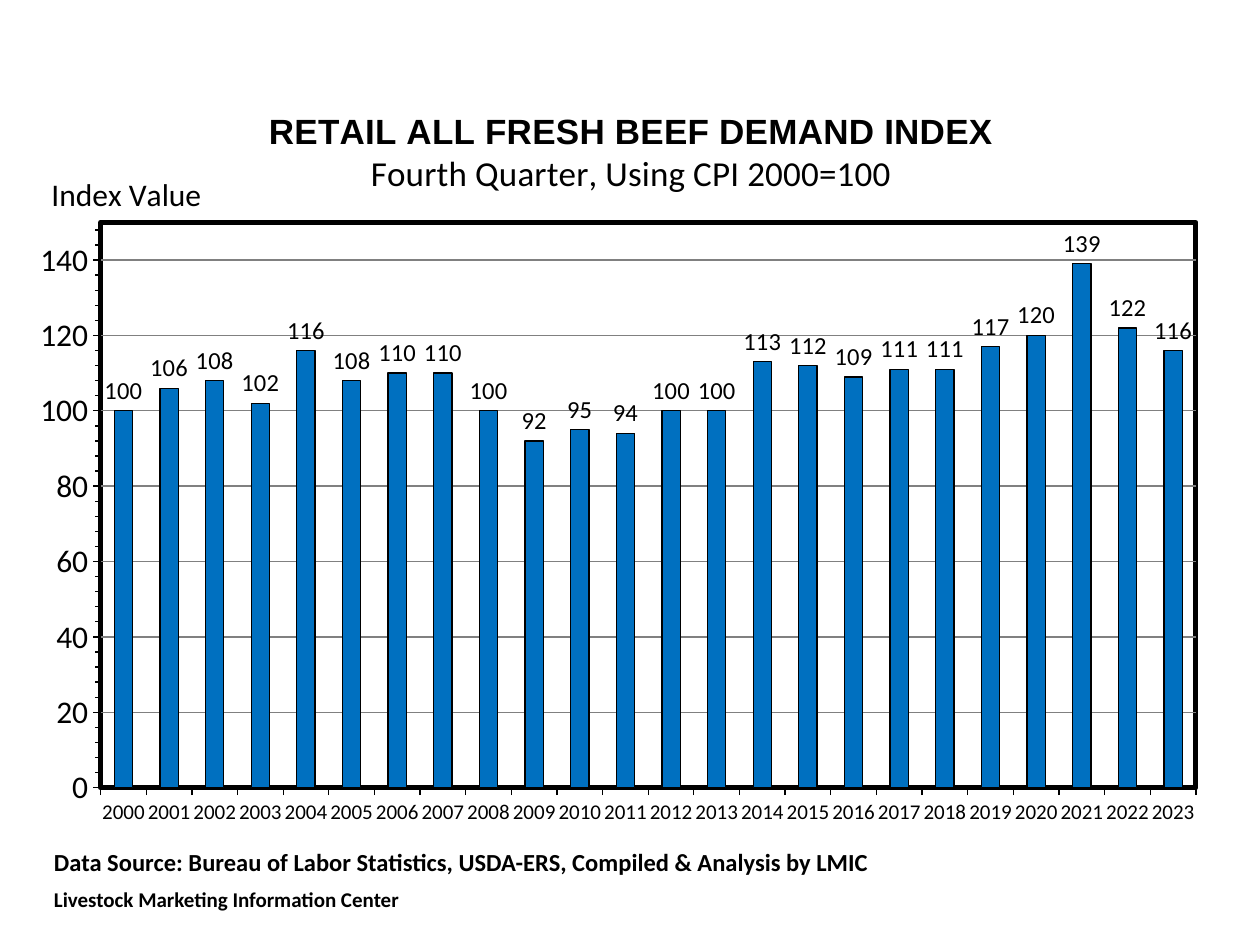
from lxml import etree
from pptx import Presentation
from pptx.chart.data import CategoryChartData
from pptx.dml.color import RGBColor
from pptx.enum.chart import XL_CHART_TYPE as ChartType, XL_LABEL_POSITION as LabelPosition
from pptx.enum.chart import XL_TICK_MARK as TickMark
from pptx.oxml import parse_xml
from pptx.oxml.ns import nsdecls, qn
from pptx.util import Inches, Pt

HEADING = "RETAIL ALL FRESH BEEF DEMAND INDEX"
SUBHEADING = "Fourth Quarter, Using CPI 2000=100"
AXIS_TITLE = "Index Value"
SOURCE = "Data Source: Bureau of Labor Statistics, USDA-ERS, Compiled & Analysis by LMIC"
PUBLISHER = "Livestock Marketing Information Center"
FIRST_YEAR = 2000
DEMAND_INDEX = [100, 106, 108, 102, 116, 108, 110, 110, 100, 92, 95, 94,
                100, 100, 113, 112, 109, 111, 111, 117, 120, 139, 122, 116]

THEME = {
    "ink": RGBColor(0, 0, 0), "bar": RGBColor(0x00, 0x70, 0xC0),
    "grid": RGBColor(0x80, 0x80, 0x80), "body": "Calibri", "display": "Arial",
    "title": 20, "axis": 18, "label": 14, "small": 12,
}


def style(font, size, name=THEME["body"], bold=False):
    font.size, font.name, font.bold = Pt(size), name, bold
    font.color.rgb = THEME["ink"]


def write(frame, text, first=False, space_before=0, **font_format):
    paragraph = frame.paragraphs[0] if first else frame.add_paragraph()
    if space_before:
        paragraph.space_before = Pt(space_before)
    run = paragraph.add_run()
    run.text = text
    style(run.font, **font_format)


def outline(line, color=THEME["ink"], width=0.75):
    line.color.rgb = color
    line.width = Pt(width)


def manual_layout(x, y, size=None):
    """Return a c:layout placed in fractions of the chart area."""
    layout = etree.Element(qn("c:layout"))
    manual = etree.SubElement(layout, qn("c:manualLayout"))
    settings = [("xMode", "edge"), ("yMode", "edge"), ("x", x), ("y", y)]
    if size:
        settings = [("layoutTarget", "inner")] + settings + list(zip("wh", size))
    for tag, value in settings:
        etree.SubElement(manual, qn(f"c:{tag}")).set("val", str(value))
    return layout


def place_title(title, x, y):
    element = title._element
    for old in element.findall(qn("c:layout")):
        element.remove(old)
    element.find(qn("c:tx")).addnext(manual_layout(x, y))


def frame_plot(chart):
    plot_area = chart._chartSpace.chart.plotArea
    for old in plot_area.findall(qn("c:layout")):
        plot_area.remove(old)
    plot_area.insert(0, manual_layout(0.065, 0.185, (0.899, 0.758)))
    plot_area.append(parse_xml(
        f'<c:spPr {nsdecls("c", "a")}>'
        '<a:solidFill><a:srgbClr val="FFFFFF"/></a:solidFill>'
        '<a:ln w="38100"><a:solidFill><a:srgbClr val="000000"/></a:solidFill></a:ln>'
        '</c:spPr>'))


def add_index_chart(slide):
    data = CategoryChartData()
    data.categories = [str(FIRST_YEAR + i) for i in range(len(DEMAND_INDEX))]
    data.add_series("Series 1", DEMAND_INDEX)
    chart = slide.shapes.add_chart(
        ChartType.COLUMN_CLUSTERED, Inches(0.17), Inches(0.67),
        Inches(9.67), Inches(5.92), data).chart
    chart.has_legend = False
    style(chart.font, THEME["axis"])

    chart.has_title = True
    heading = chart.chart_title.text_frame
    write(heading, HEADING, first=True, size=THEME["title"], name=THEME["display"], bold=True)
    write(heading, SUBHEADING, size=THEME["title"])
    place_title(chart.chart_title, 0.2, 0.03)

    years, values = chart.category_axis, chart.value_axis
    for axis in (years, values):
        axis.major_tick_mark = TickMark.OUTSIDE
        outline(axis.format.line)
    years.has_major_gridlines = False
    style(years.tick_labels.font, THEME["small"])

    values.minimum_scale, values.maximum_scale = 0, 150
    values.major_unit, values.minor_unit = 20, 4
    values.minor_tick_mark = TickMark.OUTSIDE
    values.has_major_gridlines = True
    outline(values.major_gridlines.format.line, THEME["grid"])
    values.has_title = True
    axis_title = values.axis_title.text_frame
    write(axis_title, AXIS_TITLE, first=True, size=THEME["axis"])
    body = axis_title._txBody.find(qn("a:bodyPr"))
    body.set("rot", "0")
    body.set("vert", "horz")
    place_title(values.axis_title, 0.02, 0.11)

    plot = chart.plots[0]
    plot.gap_width = 150
    plot.vary_by_categories = False
    bars = plot.series[0]
    bars.format.fill.solid()
    bars.format.fill.fore_color.rgb = THEME["bar"]
    outline(bars.format.line)
    labels = bars.data_labels
    labels.show_value = True
    labels.position = LabelPosition.OUTSIDE_END
    labels.number_format, labels.number_format_is_linked = "#,##0", False
    style(labels.font, THEME["label"])
    frame_plot(chart)


def add_source_note(slide):
    note = slide.shapes.add_textbox(
        Inches(0.33), Inches(6.67), Inches(6.91), Inches(0.64)).text_frame
    note.word_wrap = True
    write(note, SOURCE, first=True, size=THEME["label"], bold=True)
    write(note, PUBLISHER, space_before=6, size=THEME["small"], bold=True)


def main():
    deck = Presentation()
    deck.slide_width, deck.slide_height = Inches(10), Inches(7.5)
    slide = deck.slides.add_slide(deck.slide_layouts.get_by_name("Blank"))
    add_index_chart(slide)
    add_source_note(slide)
    deck.save("out.pptx")


if __name__ == "__main__":
    main()
